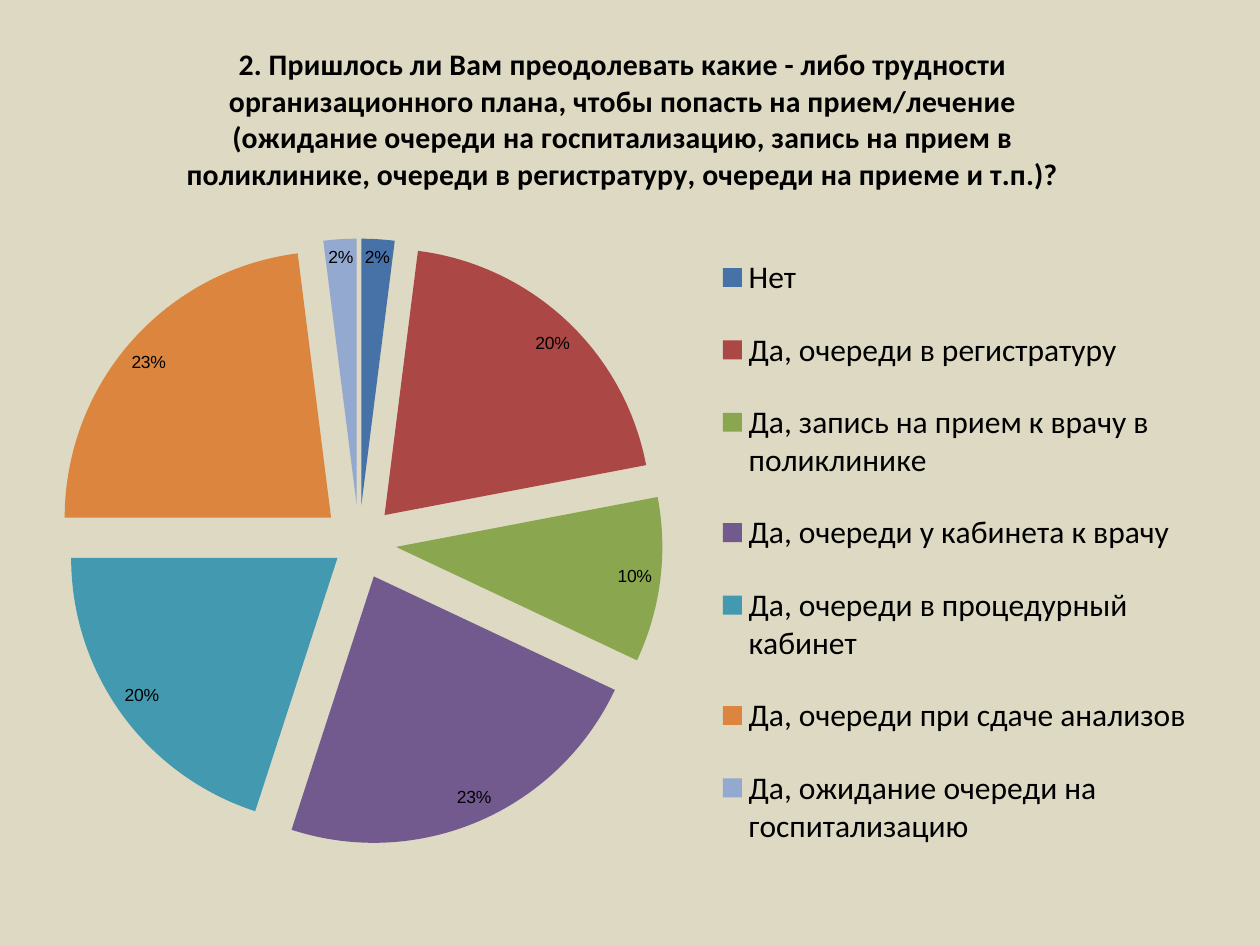
"""Build a survey slide with an exploded pie chart of access difficulties."""
from lxml import etree
from pptx import Presentation
from pptx.chart.data import CategoryChartData
from pptx.dml.color import RGBColor
from pptx.enum import chart as ch
from pptx.oxml import ns
from pptx.util import Inches, Pt

BG = RGBColor(0xDD, 0xD9, 0xC3)
BLACK = RGBColor(0, 0, 0)
BLUE = RGBColor(0x46, 0x72, 0xA8)
RED = RGBColor(0xAB, 0x47, 0x44)
GREEN = RGBColor(0x8A, 0xA6, 0x4F)
PURPLE = RGBColor(0x72, 0x5A, 0x8F)
TEAL = RGBColor(0x42, 0x99, 0xB0)
ORANGE = RGBColor(0xDC, 0x85, 0x3E)
LIGHT = RGBColor(0x93, 0xA9, 0xCF)

TITLE = [
    "2. Пришлось ли Вам преодолевать какие - либо трудности",
    "организационного плана, чтобы попасть на прием/лечение",
    "(ожидание очереди на госпитализацию, запись на прием в",
    "поликлинике, очереди в регистратуру, очереди на приеме и т.п.)?",
]
ANSWERS = [
    ("Нет", 0.02, BLUE, 14),
    ("Да, очереди в регистратуру", 0.2, RED, 14),
    ("Да, запись на прием к врачу в поликлинике", 0.1, GREEN, 14),
    ("Да, очереди у кабинета к врачу", 0.23, PURPLE, 14),
    ("Да, очереди в процедурный кабинет", 0.2, TEAL, 10),
    ("Да, очереди при сдаче анализов", 0.23, ORANGE, 14),
    ("Да, ожидание очереди на госпитализацию", 0.02, LIGHT, 14),
]
CHART_W, CHART_H = 9.45, 6.85
TITLE_FONT = {"name": "Calibri", "size": Pt(17), "bold": True}
LEGEND_FONT = {"name": "Calibri", "size": Pt(18), "bold": False}
LABEL_FONT = {"name": "Arial", "size": Pt(10), "bold": False}


def style(font, values):
    for key, value in values.items():
        setattr(font, key, value)
    font.color.rgb = BLACK


def place(el, index, target=None, **inches):
    for old in el.findall(ns.qn("c:layout")):
        el.remove(old)
    layout = etree.Element(ns.qn("c:layout"))
    manual = etree.SubElement(layout, ns.qn("c:manualLayout"))
    values = {"layoutTarget": target} if target else {}
    values.update(xMode="edge", yMode="edge")
    for key, value in inches.items():
        values[key] = value / (CHART_W if key in "xw" else CHART_H)
    for key, value in values.items():
        etree.SubElement(manual, ns.qn("c:" + key)).set("val", str(value))
    el.insert(index, layout)


prs = Presentation()
prs.slide_width, prs.slide_height = Inches(10), Inches(7.5)
s = prs.slides.add_slide(prs.slide_layouts[6])
s.background.fill.solid()
s.background.fill.fore_color.rgb = BG

data = CategoryChartData(number_format="0%")
data.categories = [answer[0] for answer in ANSWERS]
data.add_series("Series 1", [answer[1] for answer in ANSWERS])
chart = s.shapes.add_chart(
    ch.XL_CHART_TYPE.PIE,
    Inches(0.28), Inches(0.21), Inches(CHART_W), Inches(CHART_H), data,
).chart
style(chart.font, LEGEND_FONT)

chart.has_title = True
title = chart.chart_title
tf = title.text_frame
for i, line in enumerate(TITLE):
    p = tf.paragraphs[0] if i == 0 else tf.add_paragraph()
    r = p.add_run()
    r.text = line
    style(p.font, TITLE_FONT)
    style(r.font, TITLE_FONT)
title.include_in_layout = False

chart.has_legend = True
legend = chart.legend
legend.position = ch.XL_LEGEND_POSITION.RIGHT
legend.include_in_layout = False
style(legend.font, LEGEND_FONT)

plot = chart.plots[0]
plot.vary_by_categories = True
plot.has_data_labels = True
labels = plot.data_labels
for key, value in {
    "show_value": True,
    "show_percentage": False,
    "number_format": "0%",
    "number_format_is_linked": False,
    "position": ch.XL_LABEL_POSITION.BEST_FIT,
}.items():
    setattr(labels, key, value)
style(labels.font, LABEL_FONT)

series = plot.series[0]
for i, (_, _, color, offset) in enumerate(ANSWERS):
    fill = series.points[i].format.fill
    fill.solid()
    fill.fore_color.rgb = color
    explosion = etree.Element(ns.qn("c:explosion"))
    explosion.set("val", str(offset))
    series._element.findall(ns.qn("c:dPt"))[i].find(ns.qn("c:spPr")).addprevious(explosion)
explosion = etree.Element(ns.qn("c:explosion"))
explosion.set("val", "14")
series._element.find(ns.qn("c:tx")).addnext(explosion)

place(title._element, 1, x=1.17, y=0.11)
place(legend._element, 1, x=5.31, y=1.57, w=3.97, h=5.2)
place(chart._chartSpace.chart.plotArea, 0, "inner", x=0.16, y=1.66, w=4.82, h=4.87)

prs.save("out.pptx")
